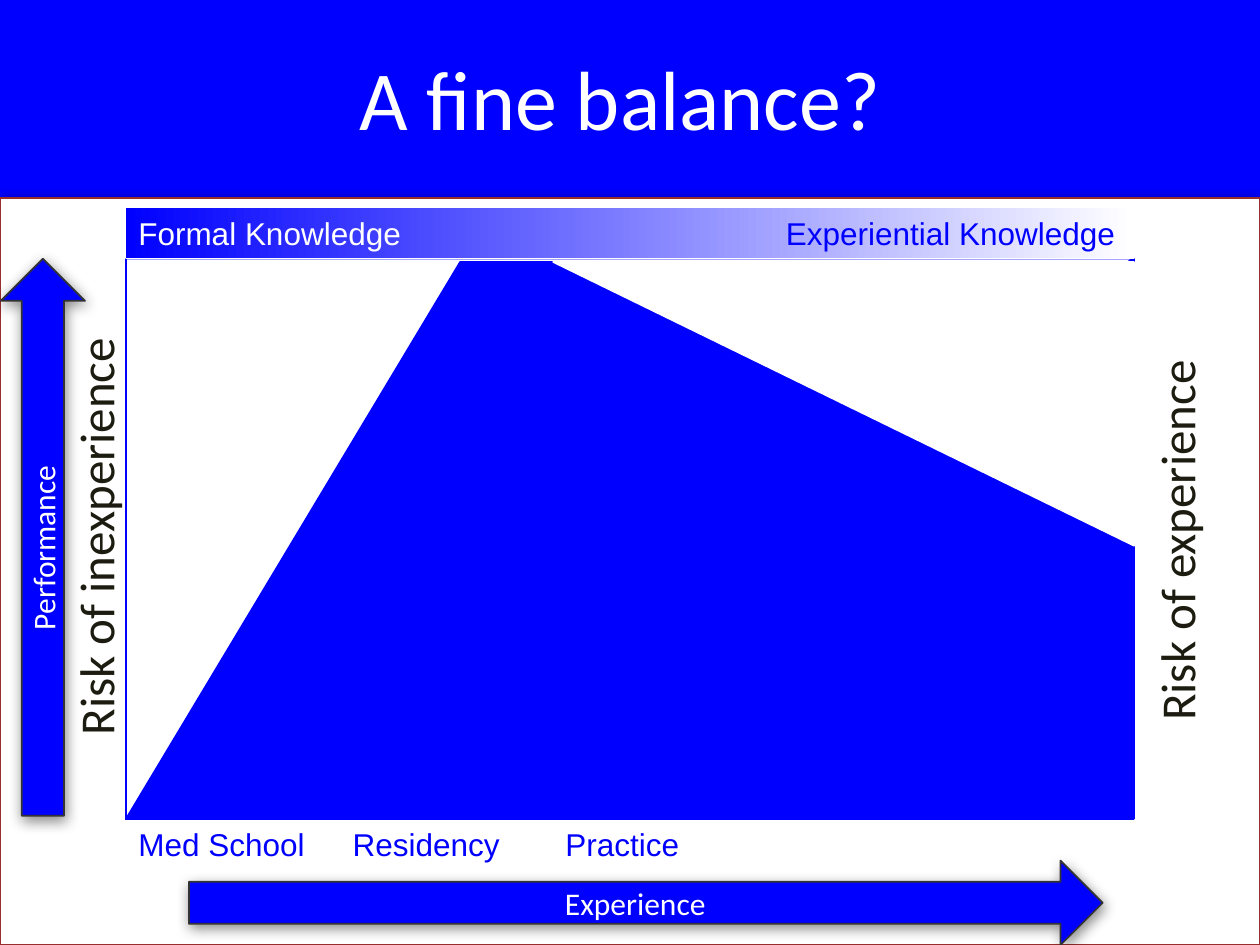
from lxml import etree
from pptx import Presentation
from pptx import util as u
from pptx.dml.color import RGBColor
from pptx.enum import shapes, text
from pptx.oxml import ns

COLORS = {
    "blue": "0000FF",
    "white": "FFFFFF",
    "border": "982E2E",
    "outline": "333333",
    "shadow": "000000",
    "ink": "1C1C10",
}
SHAPE = shapes.MSO_SHAPE
ALIGN = text.PP_ALIGN


class BalanceSlide:
    """Holds the style and the current slide, and draws each kind of element."""

    def __init__(self, presentation):
        self.slide = presentation.slides.add_slide(presentation.slide_layouts[5])
        self.paint(self.slide.background.fill, "blue")

    def color(self, name):
        return RGBColor.from_string(COLORS[name])

    def paint(self, fill, name):
        fill.solid()
        fill.fore_color.rgb = self.color(name)

    def set_text(self, paragraph, words, font, size, color, align=ALIGN.LEFT):
        paragraph.text = words
        paragraph.alignment = align
        paragraph.font.name = font
        paragraph.font.size = u.Pt(size)
        paragraph.font.color.rgb = self.color(color)

    def title(self, words, box):
        shape = self.slide.shapes.title
        shape.left, shape.top, shape.width, shape.height = map(u.Cm, box)
        shape.text_frame.vertical_anchor = text.MSO_ANCHOR.MIDDLE
        self.set_text(shape.text_frame.paragraphs[0], words, "Calibri", 48, "white", ALIGN.CENTER)

    def block(self, kind, box, fill, line=None, rotation=0, flip=False):
        shape = self.slide.shapes.add_shape(kind, *map(u.Cm, box))
        shape.shadow.inherit = False
        shape.rotation = rotation
        if flip:
            shape.element.spPr.get_or_add_xfrm().set("flipH", "1")
        self.paint(shape.fill, fill)
        if line:
            self.paint(shape.line.fill, line)
            shape.line.width = u.Pt(1)
        else:
            shape.line.fill.background()
        return shape

    def cast_shadow(self, shape):
        effects = shape.element.spPr.find(ns.qn("a:effectLst"))
        shadow = etree.SubElement(
            effects, ns.qn("a:outerShdw"), blurRad=str(u.Pt(8)), dist=str(u.Pt(2)),
            dir=str(80 * 60000), rotWithShape="0")
        tint = etree.SubElement(shadow, ns.qn("a:srgbClr"), val=COLORS["shadow"])
        etree.SubElement(tint, ns.qn("a:alpha"), val="45000")

    def panel(self, box):
        self.cast_shadow(self.block(SHAPE.RECTANGLE, box, "white", "border"))

    def arrow(self, words, box, rotation=0):
        shape = self.block(SHAPE.RIGHT_ARROW, box, "blue", "outline", rotation)
        self.cast_shadow(shape)
        shape.text_frame.vertical_anchor = text.MSO_ANCHOR.MIDDLE
        self.set_text(shape.text_frame.paragraphs[0], words, "Calibri", 18, "white", ALIGN.CENTER)

    def label(self, words, box, font="Arial", size=18, color="blue",
              align=ALIGN.LEFT, rotation=0, wrap=False):
        shape = self.slide.shapes.add_textbox(*map(u.Cm, box))
        shape.rotation = rotation
        shape.text_frame.word_wrap = wrap
        self.set_text(shape.text_frame.paragraphs[0], words, font, size, color, align)

    def knowledge_bar(self, start, end, box):
        shape = self.block(SHAPE.RECTANGLE, box, "blue")
        shape.fill.gradient()
        shape.fill.gradient_angle = 0
        for stop, name in zip(shape.fill.gradient_stops, ("blue", "white")):
            stop.color.rgb = self.color(name)
        paragraph = shape.text_frame.paragraphs[0]
        self.set_text(paragraph, start + "\t", "Arial", 18, "white")
        run = paragraph.add_run()
        run.text = end
        run.font.color.rgb = self.color("blue")
        properties = paragraph._p.get_or_add_pPr()
        tabs = etree.Element(ns.qn("a:tabLst"))
        etree.SubElement(tabs, ns.qn("a:tab"), pos=str(u.Cm(19.69)), algn="r")
        properties.find(ns.qn("a:defRPr")).addprevious(tabs)


def main():
    presentation = Presentation()
    presentation.slide_width = u.Cm(25.4)
    presentation.slide_height = u.Cm(19.05)
    slide = BalanceSlide(presentation)
    left, width, bottom = 2.54, 20.32, 16.51
    practice = 11.15

    slide.title("A fine balance?", (1.47, 0.18, 22.05, 3.56))
    slide.panel((0, 3.99, 25.4, 15.06))
    chart = (left, 5.21, width, 11.3)
    slide.block(SHAPE.RIGHT_TRIANGLE, chart, "blue", "blue", flip=True)
    slide.block(SHAPE.RIGHT_TRIANGLE, chart, "white", "blue", rotation=180, flip=True)
    slide.arrow("Experience", (3.81, 17.35, 18.42, 1.7))
    slide.arrow("Performance", (-4.75, 9.98, 11.23, 1.7), rotation=270)
    slide.block(SHAPE.RECTANGLE, (left, 5.08, width, 0.13), "white", "white")

    stages = (("Med School", left, 4.04), ("Residency", 6.86, 3.51), ("Practice", practice, 2.82))
    for words, x, span in stages:
        slide.label(words, (x, bottom, span, 1.02))

    top = 5.28
    plateau = slide.block(SHAPE.PARALLELOGRAM, (left, top, width, bottom - top), "blue", "blue")
    plateau.adjustments[0] = 0.6
    slide.block(SHAPE.RIGHT_TRIANGLE, (practice, top, left + width - practice, 5.72),
                "white", "white", rotation=180)
    slide.knowledge_bar("Formal Knowledge", "Experiential Knowledge", (left, 4.19, width, 1.02))

    risks = (("Risk of inexperience", -3.43, 9.83), ("Risk of experience", 18.36, 9.91))
    for words, x, y in risks:
        slide.label(words, (x, y, 11.23, 1.98), "Calibri", 28, "ink", ALIGN.CENTER, 270, True)

    presentation.save("out.pptx")


if __name__ == "__main__":
    main()
